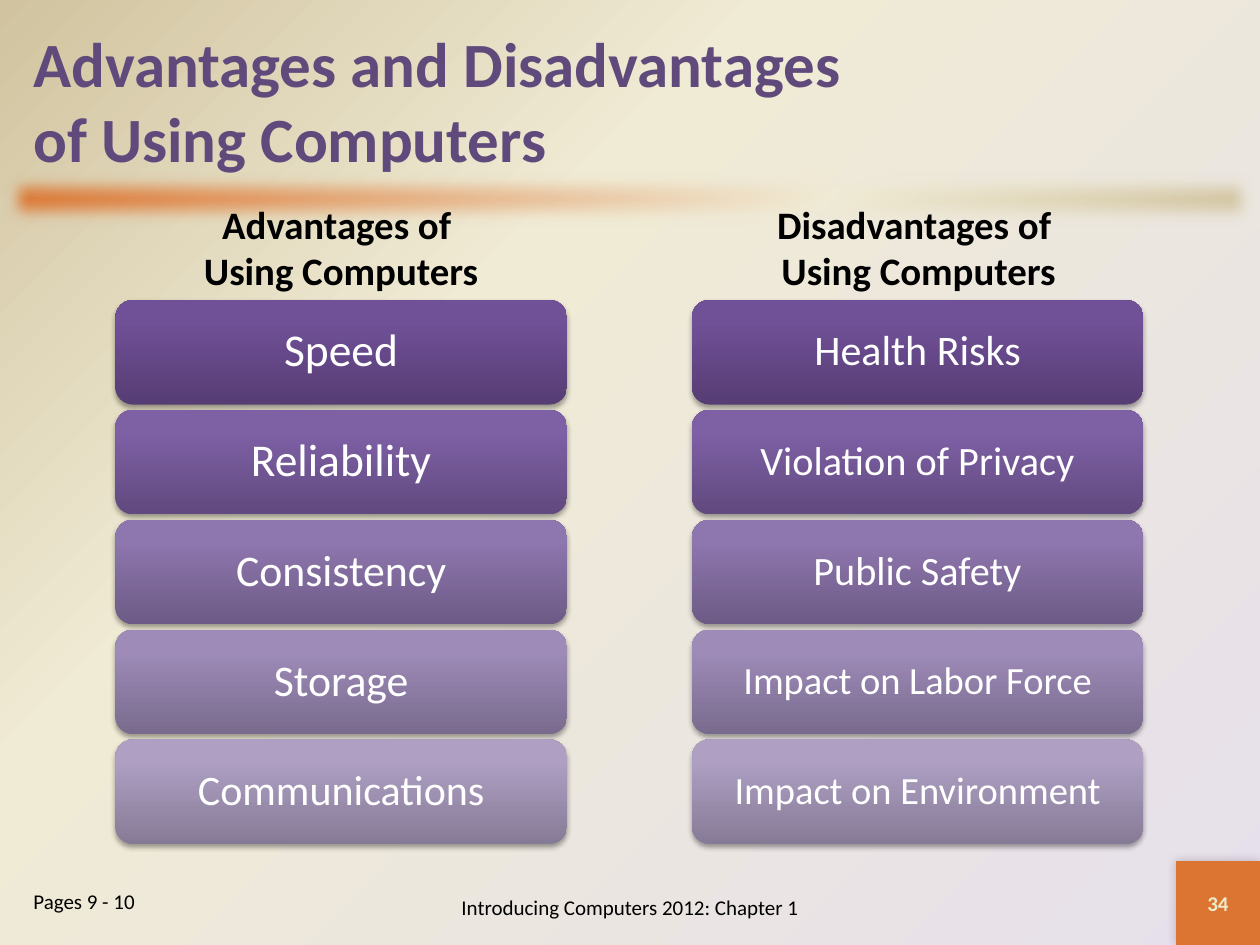
"""Build the slide on the advantages and disadvantages of computers."""
import lxml.etree
import pptx
import pptx.dml.color
import pptx.enum.shapes
import pptx.enum.text
import pptx.util

Pt = pptx.util.Pt
Align = pptx.enum.text.PP_ALIGN
Anchor = pptx.enum.text.MSO_ANCHOR
Kind = pptx.enum.shapes.MSO_SHAPE
NS = "http://schemas.openxmlformats.org/drawingml/2006/main"

TITLE = "Advantages and Disadvantages \nof Using Computers"
COLUMNS = [
    (66, 36, "Advantages of \nUsing Computers",
     [("Speed", 26), ("Reliability", 26), ("Consistency", 25),
      ("Storage", 25), ("Communications", 24)]),
    (395.4, 366, "Disadvantages of \nUsing Computers",
     [("Health Risks", 24), ("Violation of Privacy", 23), ("Public Safety", 23),
      ("Impact on Labor Force", 22), ("Impact on Environment", 22)]),
]
SHADES = [
    ("563D74", "705097", "704F99"),
    ("614A7F", "7E60A5", "7F60A7"),
    ("6D5B86", "8E76AE", "8E75B0"),
    ("796B8E", "9E8BB8", "9E8BBA"),
    ("867B96", "AE9FC3", "AE9FC4"),
]
ROW_TOP, ROW_STEP = 171.4, 62.8
CARD_W, CARD_H = 258, 59.8
PATH = ('<a:path path="circle"><a:fillToRect l="100000" t="100000"/></a:path>')
HEAD = {"size": Pt(22.2), "bold": True}
SMALL = {"size": Pt(12)}


def color(code):
    return pptx.dml.color.RGBColor.from_string(code)


def node(tag, body, attrs=""):
    return lxml.etree.fromstring(f'<a:{tag} xmlns:a="{NS}" {attrs}>{body}</a:{tag}>')


def blend(stops, end):
    marks = "".join(f'<a:gs pos="{at * 1000}"><a:srgbClr val="{code}"/></a:gs>'
                    for at, code in stops)
    return node("gradFill", f"<a:gsLst>{marks}</a:gsLst>{end}", 'rotWithShape="1"')


def slant(angle):
    return f'<a:lin ang="{angle * 60000}" scaled="0"/>'


def shade(alpha, blur, dist, angle):
    return (f'<a:outerShdw blurRad="{Pt(blur)}" dist="{Pt(dist)}" dir="{angle * 60000}" '
            f'algn="ctr" rotWithShape="0"><a:srgbClr val="000000">'
            f'<a:alpha val="{alpha * 1000}"/></a:srgbClr></a:outerShdw>')


def block(slide, kind, box, fill, effect):
    shape = slide.shapes.add_shape(kind, *map(Pt, box))
    shape.line.fill.background()
    if isinstance(fill, str):
        shape.fill.solid()
        shape.fill.fore_color.rgb = color(fill)
    else:
        shape.element.spPr.insert(2, fill)
    shape.element.spPr.append(node("effectLst", effect))
    return shape


def write(shape, text, font, ink="000000", align=Align.CENTER, anchor=Anchor.MIDDLE):
    frame = shape.text_frame
    frame.word_wrap = True
    frame.vertical_anchor = anchor
    para = frame.paragraphs[0]
    para.text = text
    para.alignment = align
    for key, value in {"name": "Calibri", **font}.items():
        setattr(para.font, key, value)
    para.font.color.rgb = color(ink)
    return para


def label(slide, box, *args, **kwargs):
    return write(slide.shapes.add_textbox(*map(Pt, box)), *args, **kwargs)


def main():
    deck = pptx.Presentation()
    deck.slide_width, deck.slide_height = Pt(720), Pt(540)
    slide = deck.slides.add_slide(deck.slide_layouts[6])

    slide.background.fill.gradient()
    back = slide.element.xpath(".//p:bgPr")[0]
    back.replace(back[0], blend([(0, "E6E0EC"), (65, "F0EBD5"), (100, "D1C39F")], PATH))

    band = blend([(0, "DB7531"), (65, "F0EBD5"), (100, "D1C39F")], slant(45))
    block(slide, Kind.RECTANGLE, (0, 96, 720, 36), band, f'<a:softEdge rad="{Pt(10)}"/>')
    label(slide, (12, 12, 696, 90), TITLE, {"size": Pt(36), "bold": True},
          "604A7B", Align.LEFT)

    for left, side, head, cards in COLUMNS:
        label(slide, (side, 121, 318, 50.4), head, HEAD, anchor=Anchor.BOTTOM)
        for row, ((text, size), tones) in enumerate(zip(cards, SHADES)):
            box = (left, ROW_TOP + row * ROW_STEP, CARD_W, CARD_H)
            fill = blend(zip((0, 80, 100), tones), slant(270))
            card = block(slide, Kind.ROUNDED_RECTANGLE, box, fill, shade(35, 3.1, 1.8, 90))
            write(card, text, {"size": Pt(size)}, "FFFFFF").line_spacing = 0.9

    label(slide, (12, 504, 132, 24), "Pages 9 - 10", SMALL,
          align=Align.LEFT, anchor=Anchor.TOP)
    label(slide, (174, 504, 372, 28.8), "Introducing Computers 2012: Chapter 1", SMALL)
    page = block(slide, Kind.RECTANGLE, (672, 492, 48, 48), "DB7531", shade(20, 6, 0, 225))
    write(page, "34", {**SMALL, "bold": True}, "EEEBCA")

    deck.save("out.pptx")


if __name__ == "__main__":
    main()
